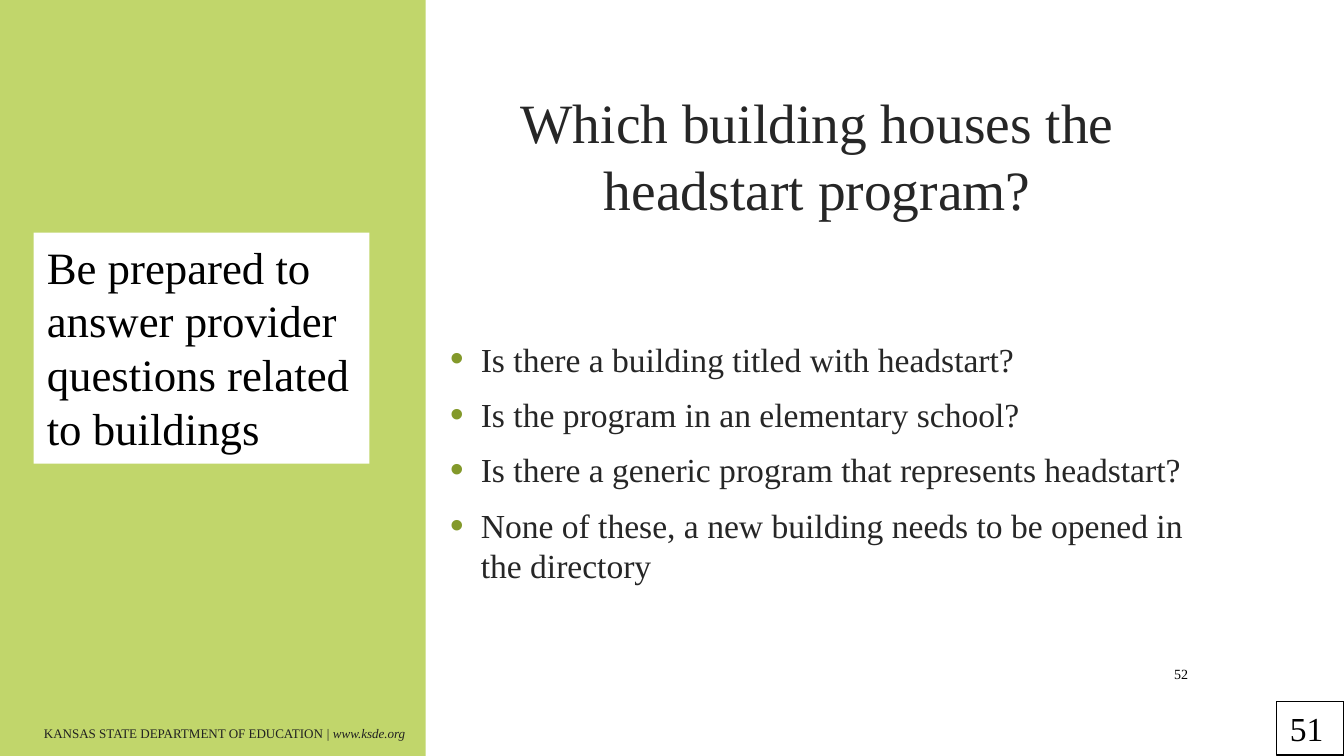
from dataclasses import dataclass

from lxml import etree
from pptx import Presentation
from pptx import util as u
from pptx.dml import color
from pptx.enum import shapes, text
from pptx.oxml import ns

Pt = u.Pt


@dataclass(frozen=True)
class Theme:
    font: str = "Times New Roman"
    panel: str = "C1D66B"
    white: str = "FFFFFF"
    black: str = "000000"
    ink: str = "262626"
    foot_ink: str = "212121"
    bullet: str = "83992A"
    title: float = 29.7
    note: float = 24
    body: float = 18
    page: float = 7.5
    foot: float = 7


T = Theme()
MID, LOW, TOP = (text.MSO_ANCHOR.MIDDLE, text.MSO_ANCHOR.BOTTOM,
                 text.MSO_ANCHOR.TOP)
LEFT, MIDST, RIGHT = (text.PP_ALIGN.LEFT, text.PP_ALIGN.CENTER,
                      text.PP_ALIGN.RIGHT)


def rgb(code):
    return color.RGBColor.from_string(code)


def place(box):
    return [Pt(v) for v in box]


def add_run(para, words, size, ink, slant=False):
    run = para.add_run()
    run.text = words
    font = run.font
    font.name, font.size, font.italic = T.font, Pt(size), slant
    font.color.rgb = rgb(ink)


def set_frame(shape, anchor=TOP, align=LEFT):
    """Wrap and anchor the text; return the first paragraph."""
    frame = shape.text_frame
    frame.word_wrap = True
    frame.auto_size = text.MSO_AUTO_SIZE.NONE
    frame.vertical_anchor = anchor
    para = frame.paragraphs[0]
    para.alignment = align
    return para


def add_rect(slide, box, fill=None, line=None):
    rect = slide.shapes.add_shape(shapes.MSO_SHAPE.RECTANGLE, *place(box))
    rect.shadow.inherit = False
    if fill:
        rect.fill.solid()
        rect.fill.fore_color.rgb = rgb(fill)
    else:
        rect.fill.background()
    if line:
        rect.line.color.rgb = rgb(line)
        rect.line.width = Pt(0.75)
    else:
        rect.line.fill.background()
    return rect


def add_bullet(para):
    props = para._p.get_or_add_pPr()
    props.set("marL", str(Pt(16.5)))
    props.set("indent", str(-Pt(16.5)))
    tint = etree.SubElement(props, ns.qn("a:buClr"))
    etree.SubElement(tint, ns.qn("a:srgbClr"), val=T.bullet)
    etree.SubElement(props, ns.qn("a:buSzPct"), val="115000")
    etree.SubElement(props, ns.qn("a:buFont"), typeface="Arial")
    etree.SubElement(props, ns.qn("a:buChar"), char="•")


def add_title(slide, box, words):
    head = slide.shapes.title
    head.left, head.top, head.width, head.height = place(box)
    add_run(set_frame(head, MID, MIDST), words, T.title, T.ink)


def add_list(slide, box, items):
    shape = slide.shapes.add_textbox(*place(box))
    para = set_frame(shape)
    for i, item in enumerate(items):
        if i:
            para = shape.text_frame.add_paragraph()
        add_bullet(para)
        para.space_before = Pt(3.6 if i else 0)
        para.space_after = Pt(4.5)
        add_run(para, item, T.body, T.ink)


def add_note(slide, box, words):
    rect = add_rect(slide, box, fill=T.white)
    add_run(set_frame(rect), words, T.note, T.black)


def add_tag(slide, box, words):
    rect = add_rect(slide, box, line=T.black)
    add_run(set_frame(rect), words, T.body, T.black)


def add_page(slide, box, words):
    shape = slide.shapes.add_textbox(*place(box))
    add_run(set_frame(shape, MID, RIGHT), words, T.page, T.black)


def add_foot(slide, box, name, site):
    shape = slide.shapes.add_textbox(*place(box))
    para = set_frame(shape, LOW)
    add_run(para, name, T.foot, T.foot_ink)
    add_run(para, site, T.foot, T.foot_ink, slant=True)


def main():
    deck = Presentation()
    deck.slide_width, deck.slide_height = Pt(720), Pt(405)
    slide = deck.slides.add_slide(deck.slide_layouts[5])

    # Left panel with footer
    add_rect(slide, (0, 0, 228, 405), fill=T.panel)
    add_foot(slide, (16.5, 384.5, 343.5, 16),
             "KANSAS STATE DEPARTMENT OF EDUCATION ", "| www.ksde.org")

    # Question and checks
    add_title(slide, (234, 46.8, 408, 72),
              "Which building houses the headstart program?")
    add_list(slide, (234, 177.8, 408, 174.2), [
        "Is there a building titled with headstart?",
        "Is the program in an elementary school?",
        "Is there a generic program that represents headstart?",
        "None of these, a new building needs to be opened in the directory",
    ])

    # Note on the panel
    add_note(slide, (18, 124.6, 180, 123.8),
             "Be prepared to answer provider questions related to buildings")

    # Numbers
    add_tag(slide, (684, 375.8, 36, 28.8), "51")
    add_page(slide, (611.3, 352.8, 32.4, 16.6), "52")

    deck.save("out.pptx")


if __name__ == "__main__":
    main()
